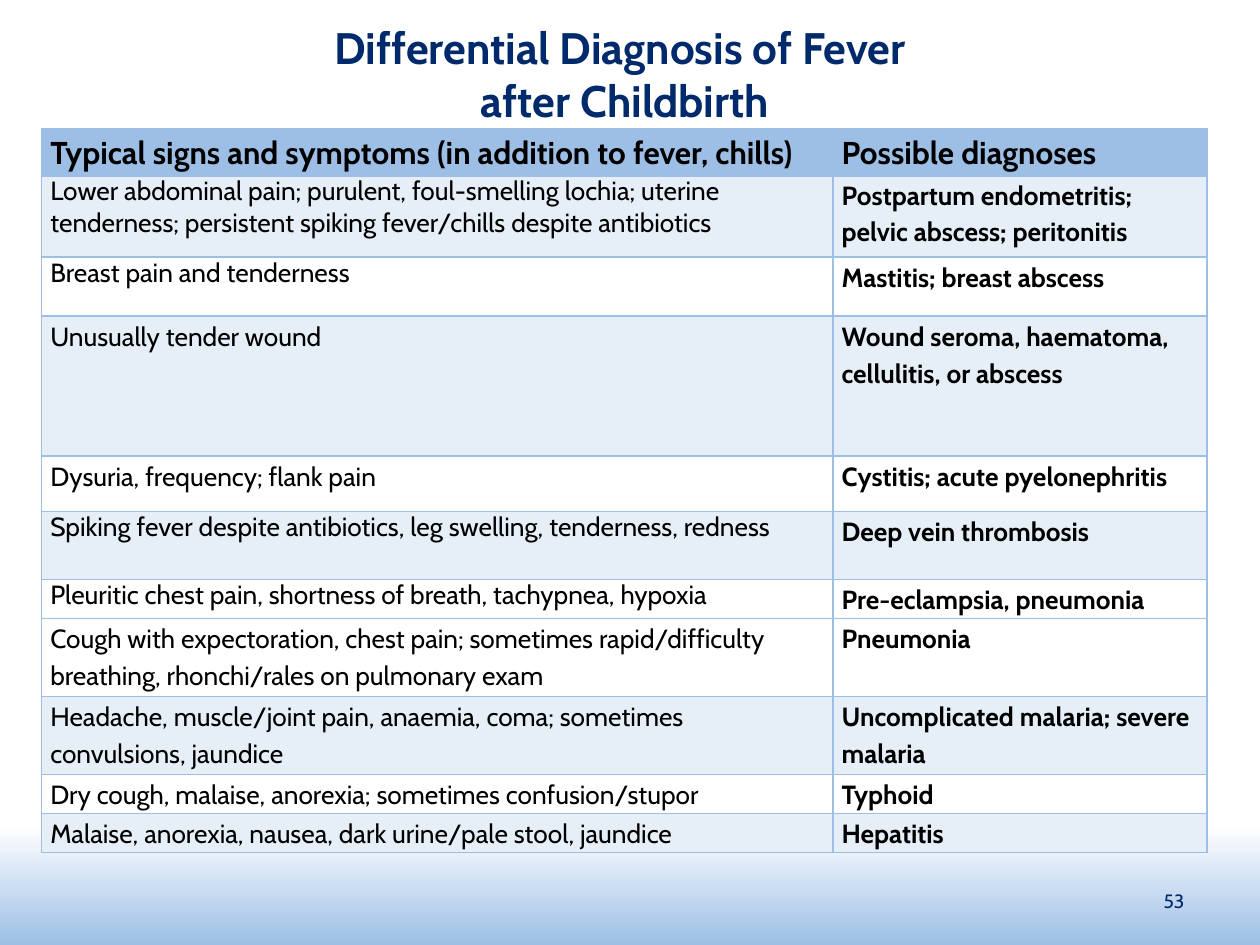
import pptx
import pptx.dml.color
import pptx.enum.shapes
import pptx.enum.text
import pptx.oxml
import pptx.oxml.ns
import pptx.util
from pptx.util import Inches

COLORS = {"navy": "002A6C", "blue": "9DBFE5", "pale": "E6EFF8",
          "white": "FFFFFF", "black": "000000"}
FONT = "Cabin"


def add_span(para, text, size, color, bold=False):
    span = para.add_run()
    span.text = text
    span.font.name = FONT
    span.font.size = pptx.util.Pt(size)
    span.font.bold = bold
    span.font.color.rgb = pptx.dml.color.RGBColor.from_string(COLORS[color])


def add_border(cell, side, width):
    cell._tc.get_or_add_tcPr().append(pptx.oxml.parse_xml(
        f'<a:ln{side} {pptx.oxml.ns.nsdecls("a")} w="{pptx.util.Pt(width)}">'
        f'<a:solidFill><a:srgbClr val="{COLORS["blue"]}"/></a:solidFill></a:ln{side}>'))


deck = pptx.Presentation()
deck.slide_width, deck.slide_height = Inches(10), Inches(7.5)
page = deck.slides.add_slide(deck.slide_layouts[5])

# Gradient band along the bottom
band = page.shapes.add_shape(pptx.enum.shapes.MSO_SHAPE.RECTANGLE,
                             Inches(0), Inches(2.75), Inches(10), Inches(4.75))
band.shadow.inherit = False
band.line.fill.background()
band.fill.gradient()
band.fill.gradient_angle = 270
for stop, position, color in zip(band.fill.gradient_stops, (0.8, 1), ("white", "blue")):
    stop.position = position
    stop.color.rgb = pptx.dml.color.RGBColor.from_string(COLORS[color])

# Title
title = page.shapes.title
title.left, title.top = Inches(0.46), Inches(0.17)
title.width, title.height = Inches(9), Inches(0.82)
title.text_frame.vertical_anchor = pptx.enum.text.MSO_ANCHOR.MIDDLE
para = title.text_frame.paragraphs[0]
para.alignment = pptx.enum.text.PP_ALIGN.CENTER
add_span(para, "Differential Diagnosis of Fever ", 25.2, "navy", True)
para.add_line_break()
add_span(para, "after Childbirth", 25.2, "navy", True)

# Table rows: height, line spacing of the signs, fill, signs, diagnoses
rows = [
    (0.37, 1.15, "blue", "Typical signs and symptoms (in addition to fever, chills)",
     "Possible diagnoses"),
    (0.65, 1, "pale", "Lower abdominal pain; purulent, foul-smelling lochia; uterine "
     "tenderness; persistent spiking fever/chills despite antibiotics",
     "Postpartum endometritis; pelvic abscess; peritonitis"),
    (0.47, 1, None, "Breast pain and tenderness", "Mastitis; breast abscess"),
    (1.11, 1.15, "pale", "Unusually tender wound",
     "Wound seroma, haematoma, cellulitis, or abscess"),
    (0.44, 1.15, None, "Dysuria, frequency; flank pain", "Cystitis; acute pyelonephritis"),
    (0.54, 1, "pale", "Spiking fever despite antibiotics, leg swelling, tenderness, redness",
     "Deep vein thrombosis"),
    (0.31, 1, None, "Pleuritic chest pain, shortness of breath, tachypnea, hypoxia",
     "Pre-eclampsia, pneumonia"),
    (0.62, 1.15, None, "Cough with expectoration, chest pain; sometimes rapid/difficulty "
     "breathing, rhonchi/rales on pulmonary exam", "Pneumonia"),
    (0.62, 1.15, "pale", "Headache, muscle/joint pain, anaemia, coma; sometimes "
     "convulsions, jaundice", "Uncomplicated malaria; severe malaria"),
    (0.31, 1.15, None, "Dry cough, malaise, anorexia; sometimes confusion/stupor", "Typhoid"),
    (0.31, 1.15, "pale", "Malaise, anorexia, nausea, dark urine/pale stool, jaundice",
     "Hepatitis"),
]
table = page.shapes.add_table(len(rows), 2, Inches(0.33), Inches(1.02), Inches(9.25),
                              Inches(sum(row[0] for row in rows))).table
table.first_row = table.horz_banding = False
table.columns[0].width, table.columns[1].width = Inches(6.28), Inches(2.97)

for r, (height, spacing, fill, *texts) in enumerate(rows):
    table.rows[r].height = Inches(height)
    for c, text in enumerate(texts):
        cell = table.cell(r, c)
        cell.margin_left = cell.margin_right = Inches(0.07)
        cell.margin_top = cell.margin_bottom = 0
        # The rule under the header is heavier
        for side, width in (("L", 1), ("R", 1), ("T", 2.25 if r == 1 else 1),
                            ("B", 2.25 if r == 0 else 1)):
            add_border(cell, side, width)
        if fill:
            cell.fill.solid()
            cell.fill.fore_color.rgb = pptx.dml.color.RGBColor.from_string(COLORS[fill])
        else:
            cell.fill.background()
        para = cell.text_frame.paragraphs[0]
        para.line_spacing = 1.15 if c == 1 else spacing
        add_span(para, text, 18 if r == 0 else 15, "black", r == 0 or c == 1)

# Page number
box = page.shapes.add_textbox(Inches(7.17), Inches(6.95), Inches(2.33), Inches(0.4))
box.text_frame.word_wrap = True
box.text_frame.vertical_anchor = pptx.enum.text.MSO_ANCHOR.MIDDLE
para = box.text_frame.paragraphs[0]
para.alignment = pptx.enum.text.PP_ALIGN.RIGHT
add_span(para, "53", 11, "navy")

deck.save("out.pptx")
